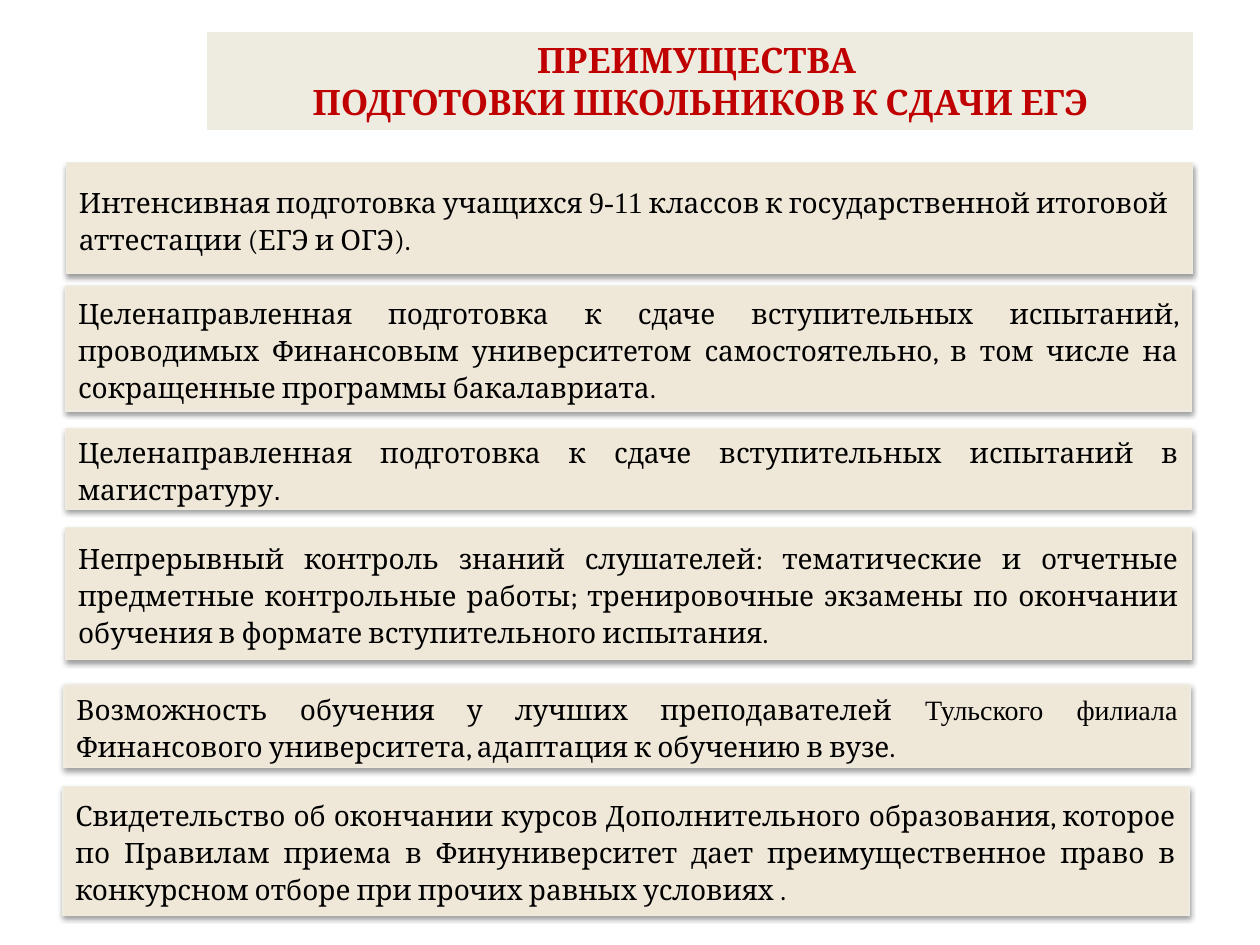
from lxml import etree
from pptx import Presentation
from pptx.dml.color import RGBColor
from pptx.enum.shapes import MSO_SHAPE
from pptx.enum.text import MSO_ANCHOR, MSO_AUTO_SIZE, PP_ALIGN
from pptx.oxml.ns import qn
from pptx.util import Pt

RECTANGLE = MSO_SHAPE.RECTANGLE
TOP, MIDDLE = MSO_ANCHOR.TOP, MSO_ANCHOR.MIDDLE
LEFT, CENTER, JUSTIFY = PP_ALIGN.LEFT, PP_ALIGN.CENTER, PP_ALIGN.JUSTIFY
NO_AUTOFIT = MSO_AUTO_SIZE.NONE
TITLE_ONLY = 5

TITLE_LINES = ["ПРЕИМУЩЕСТВА ", "ПОДГОТОВКИ ШКОЛЬНИКОВ К СДАЧИ ЕГЭ"]

# Left, top, height, alignment, then runs of text with an optional font and size
ADVANTAGES = [
    (38, 93, 63.5, LEFT, [
        ("Интенсивная подготовка учащихся ",),
        ("9-11", "Times New Roman", 17),
        (" классов к государственной итоговой аттестации (ЕГЭ и ОГЭ).",)]),
    (37.5, 163.5, 71.5, JUSTIFY, [
        ("Целенаправленная подготовка к сдаче вступительных испытаний, "
         "проводимых Финансовым университетом самостоятельно, в том числе на "
         "сокращенные программы бакалавриата.",)]),
    (37.5, 245, 46, JUSTIFY, [
        ("Целенаправленная подготовка к сдаче вступительных испытаний в "
         "магистратуру",),
        (".", "Arial")]),
    (37.5, 301.5, 75.5, JUSTIFY, [
        ("Непрерывный контроль знаний слушателей: тематические и отчетные "
         "предметные контрольные работы; тренировочные экзамены по окончании "
         "обучения в формате вступительного испытания.",)]),
    (36.5, 391.5, 47, JUSTIFY, [
        ("Возможность обучения у лучших преподавателей ",),
        ("Тульского филиала ", "Times New Roman"),
        ("Финансового университета, адаптация к обучению в вузе.",)]),
    (36, 449.5, 73.5, JUSTIFY, [
        ("Свидетельство об окончании курсов Дополнительного образования, "
         "которое по Правилам приема в Финуниверситет дает преимущественное "
         "право в конкурсном отборе при прочих равных условиях .",)]),
]


def color(value):
    return RGBColor.from_string(value)


class AdvantagesSlide:
    font_name = "Cambria"
    title_size, body_size = 20, 16
    title_color, body_color = "C00000", "000000"
    title_fill, card_fill, border = "EEECE1", "EFE8D9", "EEECE1"
    card_width = 643.5

    def __init__(self, presentation):
        self.slide = presentation.slides.add_slide(
            presentation.slide_layouts[TITLE_ONLY])

    def paint(self, shape, fill, line_width):
        shape.fill.solid()
        shape.fill.fore_color.rgb = color(fill)
        shape.line.color.rgb = color(self.border)
        shape.line.width = Pt(line_width)

    def style_font(self, font, size, text_color):
        font.name = self.font_name
        font.size = Pt(size)
        font.color.rgb = color(text_color)

    def add_shadow(self, shape):
        """Give the shape a soft shadow straight below it."""
        shape.shadow.inherit = False
        effects = shape.element.spPr.find(qn("a:effectLst"))
        shadow = etree.SubElement(
            effects, qn("a:outerShdw"), blurRad=str(Pt(3.1)),
            dist=str(Pt(1.6)), dir="5400000", rotWithShape="0")
        tint = etree.SubElement(shadow, qn("a:srgbClr"), val="000000")
        etree.SubElement(tint, qn("a:alpha"), val="38000")

    def add_title(self, lines, left, top, width, height):
        title = self.slide.shapes.title
        title.left, title.top = Pt(left), Pt(top)
        title.width, title.height = Pt(width), Pt(height)
        self.paint(title, self.title_fill, 1)
        frame = title.text_frame
        frame.text = "\n".join(lines)
        frame.auto_size = NO_AUTOFIT
        frame.vertical_anchor = TOP
        for paragraph in frame.paragraphs:
            paragraph.alignment = CENTER
            self.style_font(paragraph.font, self.title_size, self.title_color)
            paragraph.font.bold = True

    def add_card(self, left, top, height, alignment, runs):
        card = self.slide.shapes.add_shape(
            RECTANGLE, Pt(left), Pt(top), Pt(self.card_width), Pt(height))
        self.paint(card, self.card_fill, 0.75)
        self.add_shadow(card)
        frame = card.text_frame
        frame.word_wrap = True
        frame.vertical_anchor = MIDDLE
        paragraph = frame.paragraphs[0]
        paragraph.alignment = alignment
        paragraph.line_spacing = 1.1
        self.style_font(paragraph.font, self.body_size, self.body_color)
        for text, *special in runs:
            run = paragraph.add_run()
            run.text = text
            if special:
                run.font.name = special[0]
            if len(special) > 1:
                run.font.size = Pt(special[1])


def main():
    presentation = Presentation()
    presentation.slide_width, presentation.slide_height = Pt(720), Pt(540)
    slide = AdvantagesSlide(presentation)
    slide.add_title(TITLE_LINES, 119, 18.5, 562.5, 55.5)
    for advantage in ADVANTAGES:
        slide.add_card(*advantage)
    presentation.save("out.pptx")


if __name__ == "__main__":
    main()
